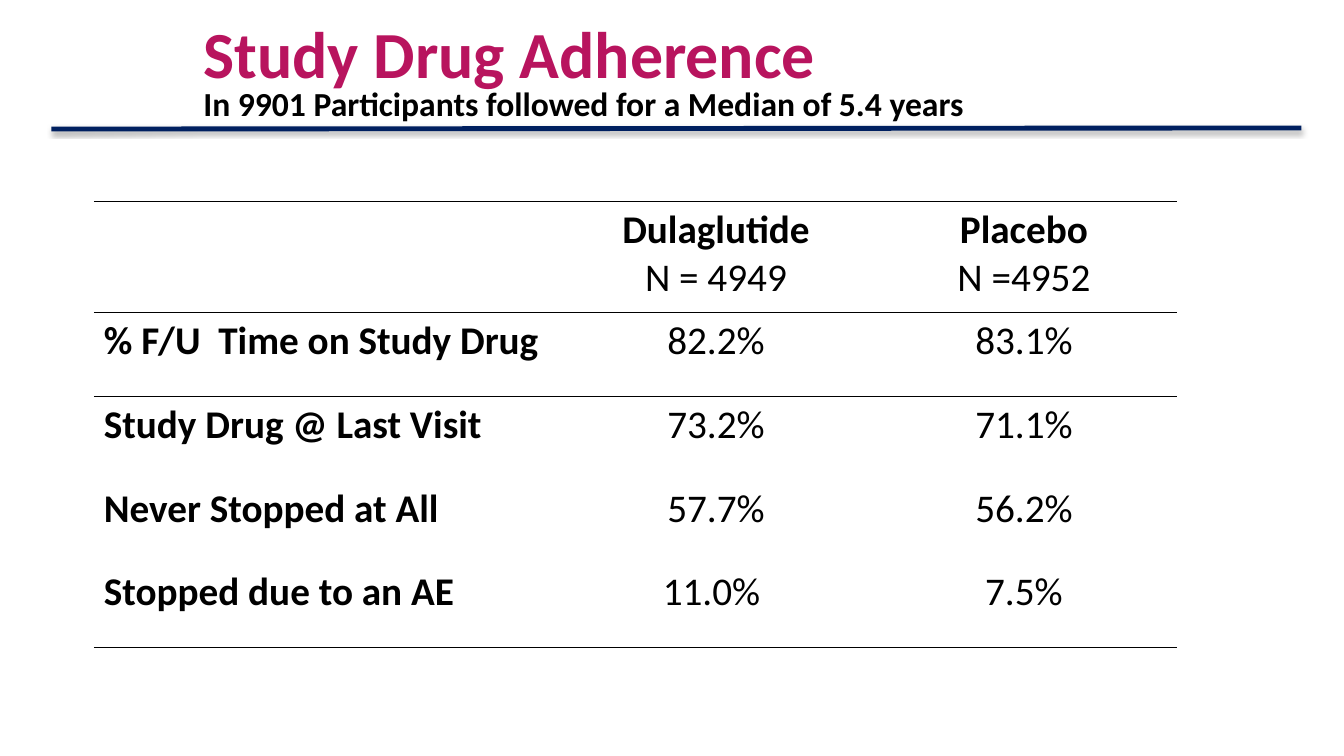
import pptx
import pptx.util
import pptx.dml.color
import pptx.enum.shapes
import pptx.enum.text
import pptx.oxml
import pptx.oxml.ns
from dataclasses import dataclass
from lxml import etree

Pt = pptx.util.Pt

# Content
TITLE = "Study Drug Adherence"
SUBTITLE = "In 9901 Participants followed for a Median of 5.4 years"
# Each cell is a list of (text, bold) lines
HEADER = [
    [],
    [("Dulaglutide", True), ("N = 4949", False)],
    [("Placebo", True), ("N =4952", False)],
]
MEASURES = [
    ("% F/U  Time on Study Drug", "82.2%", "83.1%"),
    ("Study Drug @ Last Visit", "73.2%", "71.1%"),
    ("Never Stopped at All", "57.7%", "56.2%"),
    ("Stopped due to an AE", "11.0% ", "7.5%"),
]
RULED_EDGES = {0, 1, 2, 5}  # horizontal grid edges that carry a line


@dataclass(frozen=True)
class Theme:
    font: str = "Calibri"
    title_size: float = 47
    subtitle_size: float = 24
    table_size: float = 28
    title: str = "B8145E"
    ink: str = "000000"
    rule: str = "002060"


THEME = Theme()
COLUMN_WIDTHS = [333.5, 221.8, 218.2]
HEADER_HEIGHT, MEASURE_HEIGHT = 79.2, 59.8


def add_span(para, text, size, color, bold):
    span = para.add_run()
    span.text = text
    span.font.name = THEME.font
    span.font.size = Pt(size)
    span.font.bold = bold
    span.font.color.rgb = pptx.dml.color.RGBColor.from_string(color)


def set_edge(cell, side, ruled):
    properties = cell._tc.get_or_add_tcPr()
    edge = etree.SubElement(properties, pptx.oxml.ns.qn(f"a:ln{side}"))
    if ruled:
        edge.set("w", str(Pt(1)))
        fill = etree.SubElement(edge, pptx.oxml.ns.qn("a:solidFill"))
        etree.SubElement(fill, pptx.oxml.ns.qn("a:srgbClr"), val=THEME.ink)
    else:
        etree.SubElement(edge, pptx.oxml.ns.qn("a:noFill"))


def add_header_rule(page):
    rule = page.shapes.add_connector(
        pptx.enum.shapes.MSO_CONNECTOR.STRAIGHT, Pt(36.7), Pt(92.2), Pt(929.5), Pt(91.4))
    rule.line.width = Pt(3.5)
    rule.line.color.rgb = pptx.dml.color.RGBColor.from_string(THEME.rule)
    # Soft shadow straight below the rule
    rule._element.spPr.append(pptx.oxml.parse_xml(
        f'<a:effectLst {pptx.oxml.ns.nsdecls("a")}>'
        f'<a:outerShdw blurRad="{Pt(3.1)}" dist="{Pt(1.8)}" dir="5400000" rotWithShape="0">'
        f'<a:srgbClr val="{THEME.ink}"><a:alpha val="35000"/></a:srgbClr>'
        '</a:outerShdw></a:effectLst>'))


def add_title(page):
    box = page.shapes.add_textbox(Pt(138.2), Pt(8.8), Pt(808.6), Pt(90))
    frame = box.text_frame
    frame.word_wrap = True
    frame.vertical_anchor = pptx.enum.text.MSO_ANCHOR.MIDDLE
    para = frame.paragraphs[0]
    para.line_spacing = 0.8
    add_span(para, TITLE, THEME.title_size, THEME.title, True)
    para.add_line_break()
    add_span(para, SUBTITLE, THEME.subtitle_size, THEME.ink, True)


def add_adherence_table(page):
    rows = [HEADER] + [
        [[(text, column == 0)] for column, text in enumerate(measure)]
        for measure in MEASURES]
    heights = [HEADER_HEIGHT] + [MEASURE_HEIGHT] * len(MEASURES)
    table = page.shapes.add_table(
        len(rows), len(COLUMN_WIDTHS), Pt(67), Pt(144),
        Pt(sum(COLUMN_WIDTHS)), Pt(sum(heights))).table
    table.first_row = table.horz_banding = False
    for column, width in enumerate(COLUMN_WIDTHS):
        table.columns[column].width = Pt(width)
    for row, lines_by_column in enumerate(rows):
        table.rows[row].height = Pt(heights[row])
        for column, lines in enumerate(lines_by_column):
            cell = table.cell(row, column)
            for side, ruled in (("L", False), ("R", False),
                                ("T", row in RULED_EDGES),
                                ("B", row + 1 in RULED_EDGES)):
                set_edge(cell, side, ruled)
            cell.fill.background()
            frame = cell.text_frame
            for index, (text, bold) in enumerate(lines):
                para = frame.add_paragraph() if index else frame.paragraphs[0]
                if column:
                    para.alignment = pptx.enum.text.PP_ALIGN.CENTER
                add_span(para, text, THEME.table_size, THEME.ink, bold)


def main():
    deck = pptx.Presentation()
    deck.slide_width, deck.slide_height = Pt(960), Pt(540)
    page = deck.slides.add_slide(deck.slide_layouts[6])
    add_header_rule(page)
    add_adherence_table(page)
    add_title(page)
    deck.save("out.pptx")


if __name__ == "__main__":
    main()
